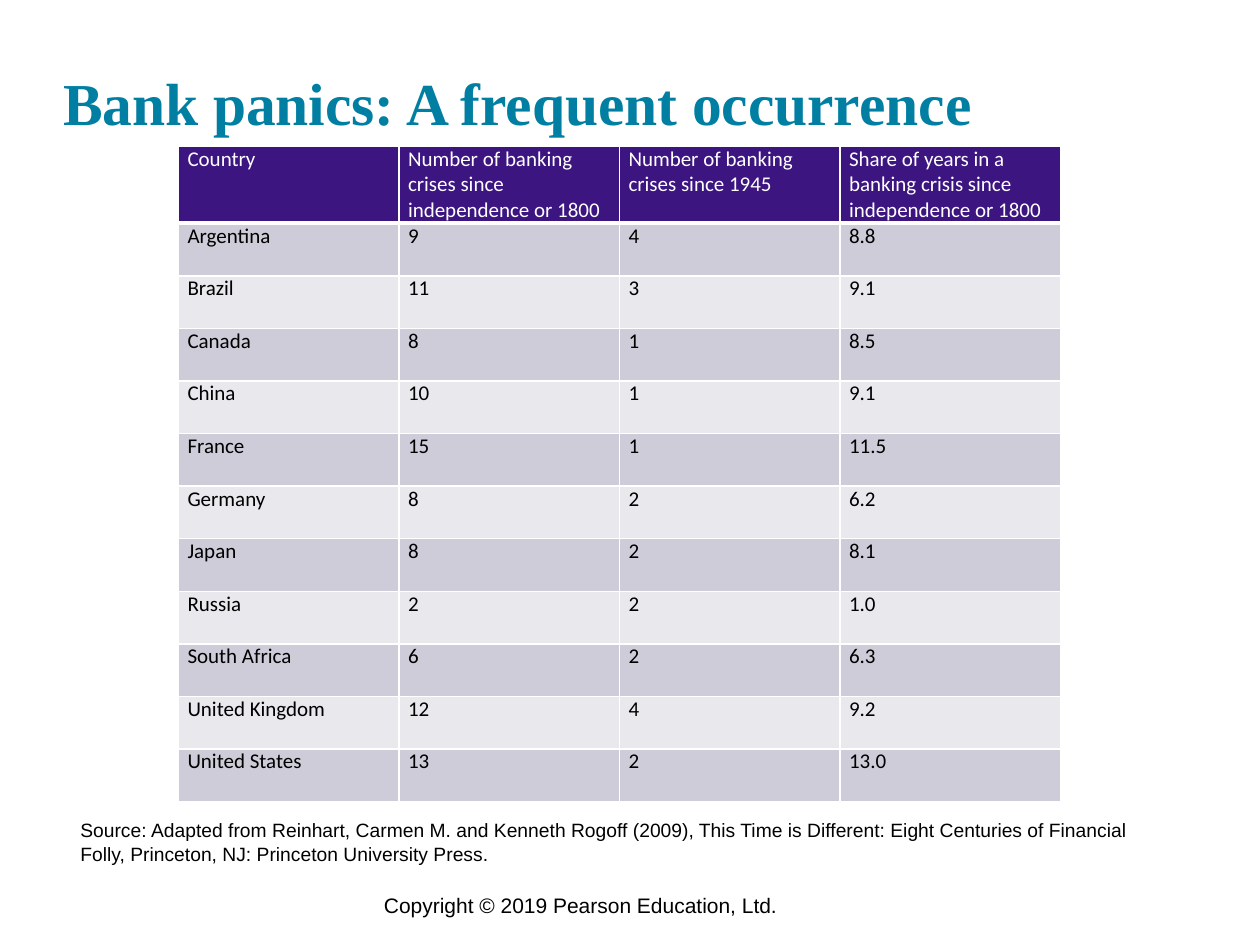
import pptx
import pptx.dml.color
import pptx.enum.text
import pptx.oxml
import pptx.oxml.ns
import pptx.util

Cm = pptx.util.Cm
Pt = pptx.util.Pt
RGB = pptx.dml.color.RGBColor.from_string
INK = {"title": "007FA3", "text": "000000", "head": "3C1581",
       "odd": "CECCD8", "even": "E8E8ED", "white": "FFFFFF"}


def style(para, name, size, ink, bold=False):
    for key, val in {"name": name, "size": Pt(size), "bold": bold}.items():
        setattr(para.font, key, val)
    para.font.color.rgb = RGB(INK[ink])


def edge(cell, side, width):
    cell._tc.get_or_add_tcPr().append(pptx.oxml.parse_xml(
        f'<a:ln{side} {pptx.oxml.ns.nsdecls("a")} w="{Pt(width)}"><a:solidFill>'
        f'<a:srgbClr val="{INK["white"]}"/></a:solidFill></a:ln{side}>'))


deck = pptx.Presentation()
deck.slide_width, deck.slide_height = Cm(25.4), Cm(19.05)
slide = deck.slides.add_slide(deck.slide_layouts[5])

# Title
title = slide.shapes.title
place = {"left": Cm(1.27), "top": Cm(0.61), "width": Cm(21.59 + 1.27), "height": Cm(2.16)}
for key, val in place.items():
    setattr(title, key, val)
frame = title.text_frame
form = {"margin_left": 0, "margin_right": 0, "margin_top": 0, "margin_bottom": 0,
        "auto_size": pptx.enum.text.MSO_AUTO_SIZE.NONE,
        "vertical_anchor": pptx.enum.text.MSO_ANCHOR.BOTTOM}
for key, val in form.items():
    setattr(frame, key, val)
frame.text = "Bank panics: A frequent occurrence"
frame.paragraphs[0].alignment = pptx.enum.text.PP_ALIGN.LEFT
style(frame.paragraphs[0], "Times New Roman", 34, "title", True)

# Table of banking crises
rows = [
    ("Country", "Number of banking crises since independence or 1800",
     "Number of banking crises since 1945",
     "Share of years in a banking crisis since independence or 1800"),
    ("Argentina", "9", "4", "8.8"),
    ("Brazil", "11", "3", "9.1"),
    ("Canada", "8", "1", "8.5"),
    ("China", "10", "1", "9.1"),
    ("France", "15", "1", "11.5"),
    ("Germany", "8", "2", "6.2"),
    ("Japan", "8", "2", "8.1"),
    ("Russia", "2", "2", "1.0"),
    ("South Africa", "6", "2", "6.3"),
    ("United Kingdom", "12", "4", "9.2"),
    ("United States", "13", "2", "13.0"),
]
high = Cm(1.06)
table = slide.shapes.add_table(len(rows), len(rows[0]), Cm(3.6), Cm(2.95),
                               Cm(17.78), high * len(rows)).table
pad = {"margin_left": Cm(0.18), "margin_right": Cm(0.18),
       "margin_top": 0, "margin_bottom": 0}
for r, row in enumerate(rows):
    table.rows[r].height = high
    fill = "head" if r == 0 else "odd" if r % 2 else "even"
    for c, text in enumerate(row):
        cell = table.cell(r, c)
        cell.text = text
        for key, val in pad.items():
            setattr(cell, key, val)
        for side in "LRTB":
            edge(cell, side, 3 if (r, side) in [(0, "B"), (1, "T")] else 1)
        cell.fill.solid()
        cell.fill.fore_color.rgb = RGB(INK[fill])
        style(cell.text_frame.paragraphs[0], "Calibri", 12, "text" if r else "white")

# Source and copyright lines
notes = [
    (1.37, 16.38, 21.69, 1.19, 11,
     "Source: Adapted from Reinhart, Carmen M. and Kenneth Rogoff (2009), This Time is "
     "Different: Eight Centuries of Financial Folly, Princeton, NJ: Princeton University Press."),
    (7.49, 17.86, 17.15, 0.76, 12, "Copyright © 2019 Pearson Education, Ltd."),
]
for left, top, width, height, size, text in notes:
    box = slide.shapes.add_textbox(Cm(left), Cm(top), Cm(width), Cm(height))
    box.text_frame.word_wrap = True
    box.text_frame.text = text
    style(box.text_frame.paragraphs[0], "Arial", size, "text")

deck.save("out.pptx")
